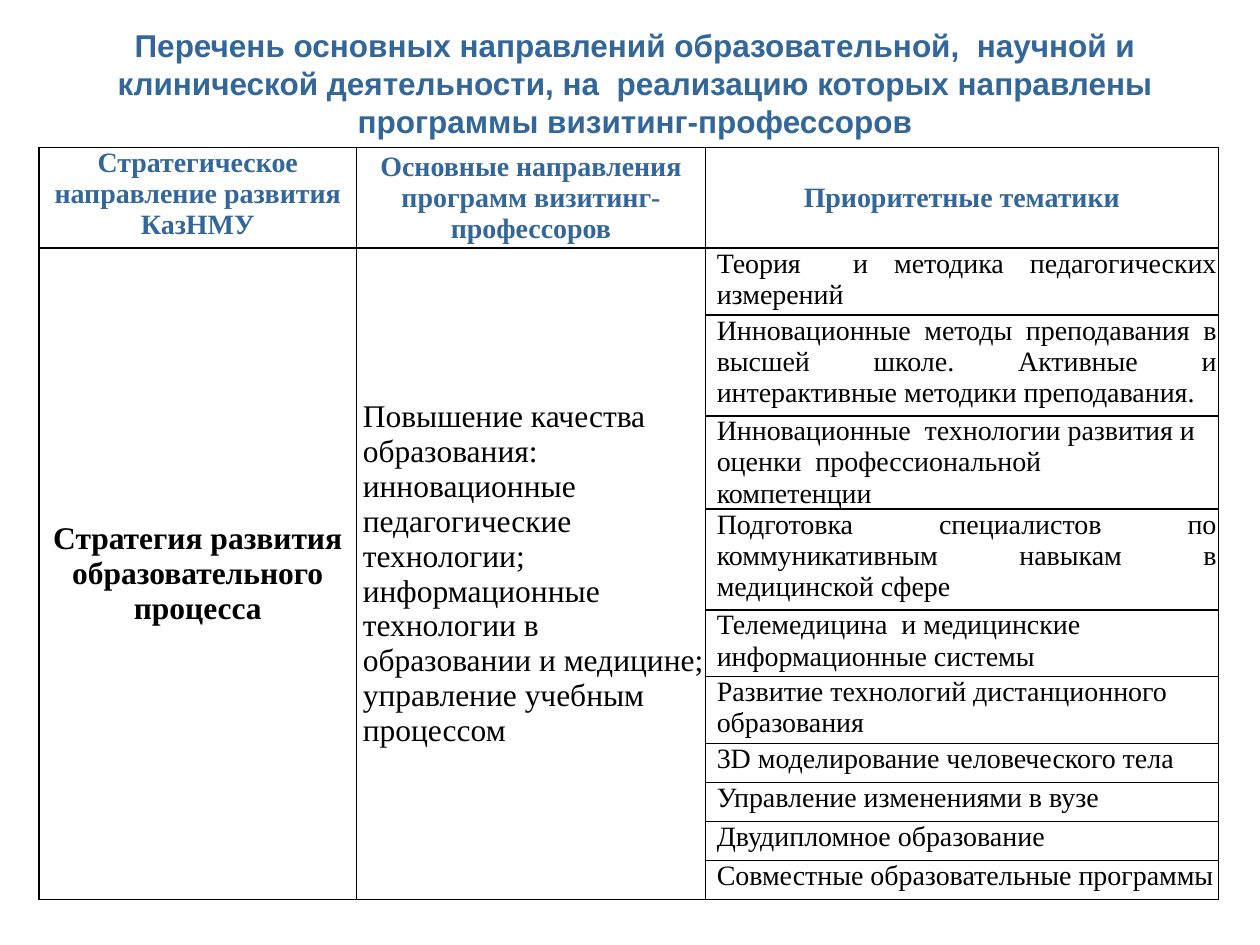
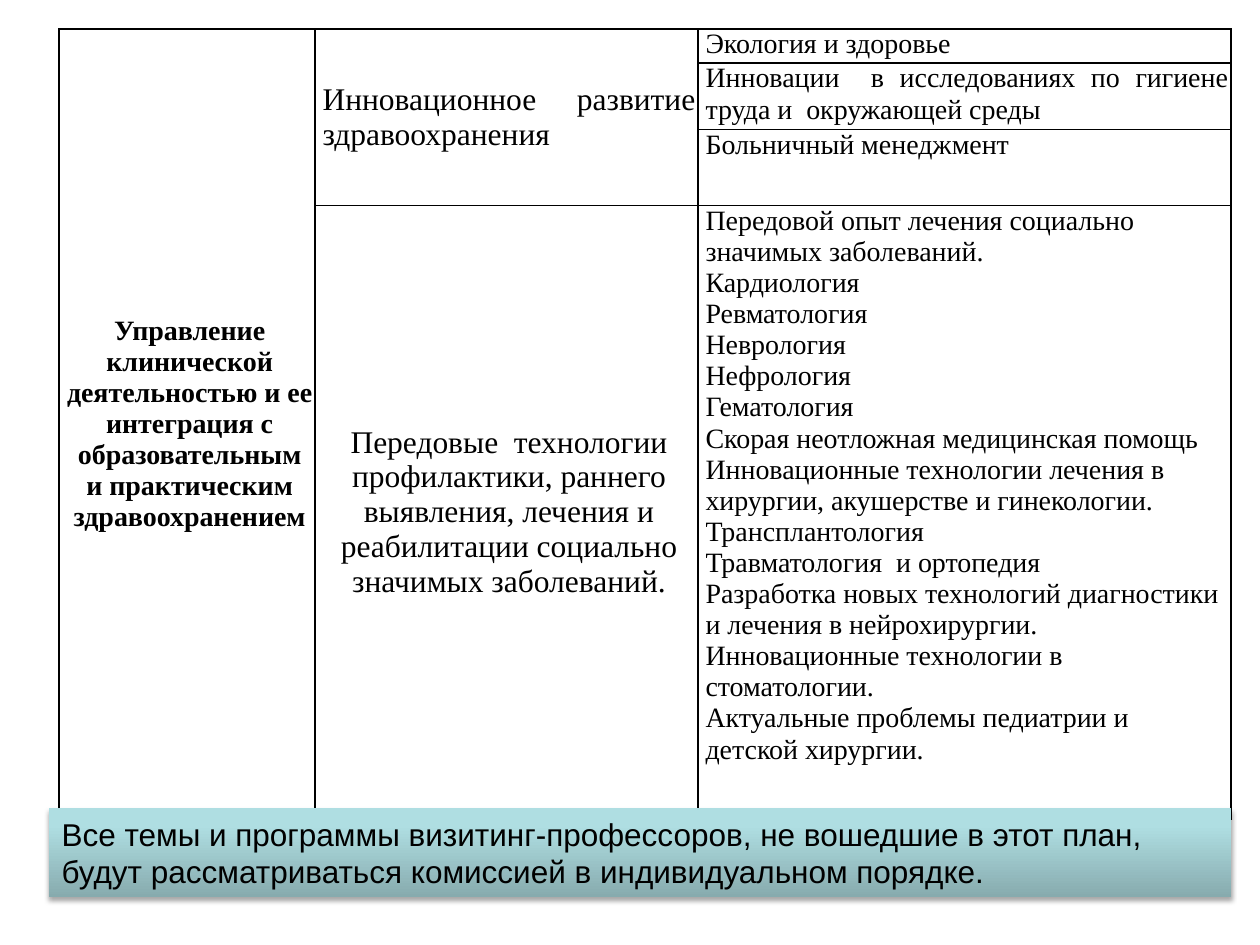
import pptx
import pptx.util
import pptx.dml.color
import pptx.enum.text
import pptx.enum.shapes
import pptx.oxml

Inches = pptx.util.Inches
Pt = pptx.util.Pt
ALIGN = pptx.enum.text.PP_ALIGN
ANCHOR = pptx.enum.text.MSO_ANCHOR
L, C, J = ALIGN.LEFT, ALIGN.CENTER, ALIGN.JUSTIFY

COLORS = {
    "heading": "336699",
    "text": "000000",
    "border": "000000",
    "band_dark": "87ABAE",
    "band_mid": "AFDEE2",
    "band_light": "AFE0E4",
}
SANS, SERIF = "Arial", "Times New Roman"
NS = 'xmlns:a="http://schemas.openxmlformats.org/drawingml/2006/main"'

TOPICS = [
    ("Теория  и методика педагогических измерений", J),
    ("Инновационные методы преподавания в высшей школе. Активные и интерактивные методики преподавания.", J),
    ("Инновационные  технологии развития и оценки  профессиональной   компетенции", L),
    ("Подготовка специалистов по коммуникативным навыкам в медицинской сфере", J),
    ("Телемедицина  и медицинские информационные системы", L),
    ("Развитие технологий дистанционного образования", L),
    ("3D моделирование человеческого тела", L),
    ("Управление изменениями в вузе", J),
    ("Двудипломное образование", J),
    ("Совместные образовательные программы", J),
]
HEALTH_TOPICS = [
    ("Экология и здоровье", J),
    ("Инновации  в исследованиях по гигиене труда и  окружающей среды", J),
    ("Больничный менеджмент", L),
]
CLINICAL_TOPICS = [
    ("Передовой опыт лечения социально значимых заболеваний.", L),
    ("Кардиология", L),
    ("Ревматология", J),
    ("Неврология", J),
    ("Нефрология", J),
    ("Гематология", L),
    ("Скорая неотложная медицинская помощь", J),
    ("Инновационные технологии лечения в хирургии, акушерстве и гинекологии. Трансплантология", L),
    ("Травматология  и ортопедия", L),
    ("Разработка новых технологий диагностики и лечения в нейрохирургии.", L),
    ("Инновационные технологии в стоматологии.", L),
    ("Актуальные проблемы педиатрии и детской хирургии.", L),
]


class Deck:
    def __init__(self):
        self.prs = pptx.Presentation()
        self.prs.slide_width = Inches(10)
        self.prs.slide_height = Inches(7.5)
        self.s = None

    def slide(self, layout):
        self.s = self.prs.slides.add_slide(self.prs.slide_layouts[layout])

    def add_text(self, tf, paras, size, font, color="text", bold=False, indent=0):
        for i, (text, align) in enumerate(paras):
            p = tf.add_paragraph() if i else tf.paragraphs[0]
            p.alignment = align
            p.line_spacing = 1.0
            p.space_before = p.space_after = Pt(0)
            if indent:
                pPr = p._p.get_or_add_pPr()
                pPr.set("marL", str(Inches(indent)))
                pPr.set("indent", "0")
            r = p.add_run()
            r.text = text
            r.font.size = Pt(size)
            r.font.name = font
            r.font.bold = bold
            r.font.color.rgb = pptx.dml.color.RGBColor.from_string(COLORS[color])

    def title(self, text, x, y, w, h):
        sp = self.s.shapes.title
        sp.left, sp.top, sp.width, sp.height = map(Inches, (x, y, w, h))
        tf = sp.text_frame
        tf.word_wrap = True
        tf.auto_size = pptx.enum.text.MSO_AUTO_SIZE.NONE
        tf.vertical_anchor = ANCHOR.TOP
        self.add_text(tf, [(text, C)], 18, SANS, "heading", True)

    def table(self, x, y, cols, rows, inset):
        frame = self.s.shapes.add_table(len(rows), len(cols), Inches(x), Inches(y),
                                        Inches(sum(cols)), Inches(sum(rows)))
        tbl = frame.table
        tbl.first_row = tbl.horz_banding = False
        for col, w in zip(tbl.columns, cols):
            col.width = Inches(w)
        for row, h in zip(tbl.rows, rows):
            row.height = Inches(h)
        for cell in tbl.iter_cells():
            cell.margin_left = cell.margin_right = Inches(inset)
            cell.margin_top = cell.margin_bottom = 0
            cell.fill.background()
            self.borders(cell)
        return tbl

    def borders(self, cell):
        tcPr = cell._tc.get_or_add_tcPr()
        for i, side in enumerate("LRTB"):
            tcPr.insert(i, pptx.oxml.parse_xml(
                f'<a:ln{side} {NS} w="{Pt(1)}"><a:solidFill><a:srgbClr val="{COLORS["border"]}"/>'
                f'</a:solidFill></a:ln{side}>'))

    def cell(self, tbl, row, col, paras, size=16, span=1, anchor=ANCHOR.MIDDLE, **style):
        cell = tbl.cell(row, col)
        if span > 1:
            cell.merge(tbl.cell(row + span - 1, col))
        cell.vertical_anchor = anchor
        self.add_text(cell.text_frame, paras, size, SERIF, **style)

    def band(self, text, x, y, w, h):
        sp = self.s.shapes.add_shape(pptx.enum.shapes.MSO_SHAPE.RECTANGLE,
                                     Inches(x), Inches(y), Inches(w), Inches(h))
        sp.line.fill.background()
        stops = "".join(f'<a:gs pos="{pos * 1000}"><a:srgbClr val="{COLORS[name]}"/></a:gs>'
                        for pos, name in ((0, "band_dark"), (80, "band_mid"), (100, "band_light")))
        spPr = sp._element.spPr
        spPr.insert(2, pptx.oxml.parse_xml(
            f'<a:gradFill {NS} rotWithShape="1"><a:gsLst>{stops}</a:gsLst>'
            f'<a:lin ang="16200000" scaled="0"/></a:gradFill>'))
        spPr.append(pptx.oxml.parse_xml(
            f'<a:effectLst {NS}><a:outerShdw blurRad="{Pt(3.1)}" dist="{Pt(1.8)}" dir="5400000" '
            f'rotWithShape="0"><a:srgbClr val="000000"><a:alpha val="35000"/></a:srgbClr>'
            f'</a:outerShdw></a:effectLst>'))
        tf = sp.text_frame
        tf.word_wrap = True
        self.add_text(tf, [(text, L)], 18, SANS)


def education(deck):
    deck.slide(5)
    deck.title("Перечень основных направлений образовательной,  научной и клинической деятельности, "
               "на  реализацию которых направлены программы визитинг-профессоров",
               0.47, 0.16, 9.14, 1.01)
    one, two, three = 0.31, 0.53, 0.8
    tbl = deck.table(0.31, 1.17, [2.52, 2.77, 4.07],
                     [three, two, three, two, three, two, two] + [one] * 4, 0.01)
    headers = ["Стратегическое направление развития КазНМУ",
               "Основные направления программ визитинг-профессоров",
               "Приоритетные тематики"]
    for col, text in enumerate(headers):
        deck.cell(tbl, 0, col, [(text, C)], color="heading", bold=True,
                  anchor=ANCHOR.MIDDLE if col else ANCHOR.TOP)
    deck.cell(tbl, 1, 0, [("Стратегия развития образовательного процесса", C)], 18,
              span=len(TOPICS), bold=True)
    directions = ["Повышение качества образования:",
                  "инновационные педагогические технологии;",
                  "информационные технологии в образовании и медицине;",
                  "управление учебным процессом"]
    deck.cell(tbl, 1, 1, [(text, L) for text in directions], 18, span=len(TOPICS), indent=0.04)
    for row, topic in enumerate(TOPICS, 1):
        deck.cell(tbl, row, 2, [topic], anchor=ANCHOR.TOP, indent=0.08)


def clinic(deck):
    deck.slide(6)
    tbl = deck.table(0.47, 0.23, [2.03, 3.04, 4.23], [0.27, 0.53, 0.6, 4.87], 0.02)
    deck.cell(tbl, 0, 0, [("Управление клинической деятельностью и ее интеграция с образовательным "
                           "и практическим здравоохранением", C)], span=4, bold=True, indent=0.04)
    deck.cell(tbl, 0, 1, [("Инновационное развитие здравоохранения", J)], 18, span=3, indent=0.04)
    deck.cell(tbl, 3, 1, [("Передовые  технологии профилактики, раннего выявления, лечения и "
                           "реабилитации социально значимых заболеваний.", C)], 18, indent=0.04)
    for row, paras in enumerate([[topic] for topic in HEALTH_TOPICS] + [CLINICAL_TOPICS]):
        deck.cell(tbl, row, 2, paras, anchor=ANCHOR.TOP, indent=0.04)
    deck.band("Все темы и программы визитинг-профессоров, не вошедшие в этот план, "
              "будут рассматриваться комиссией в индивидуальном порядке.",
              0.39, 6.41, 9.38, 0.71)


def main():
    deck = Deck()
    education(deck)
    clinic(deck)
    deck.prs.save("out.pptx")


if __name__ == "__main__":
    main()
